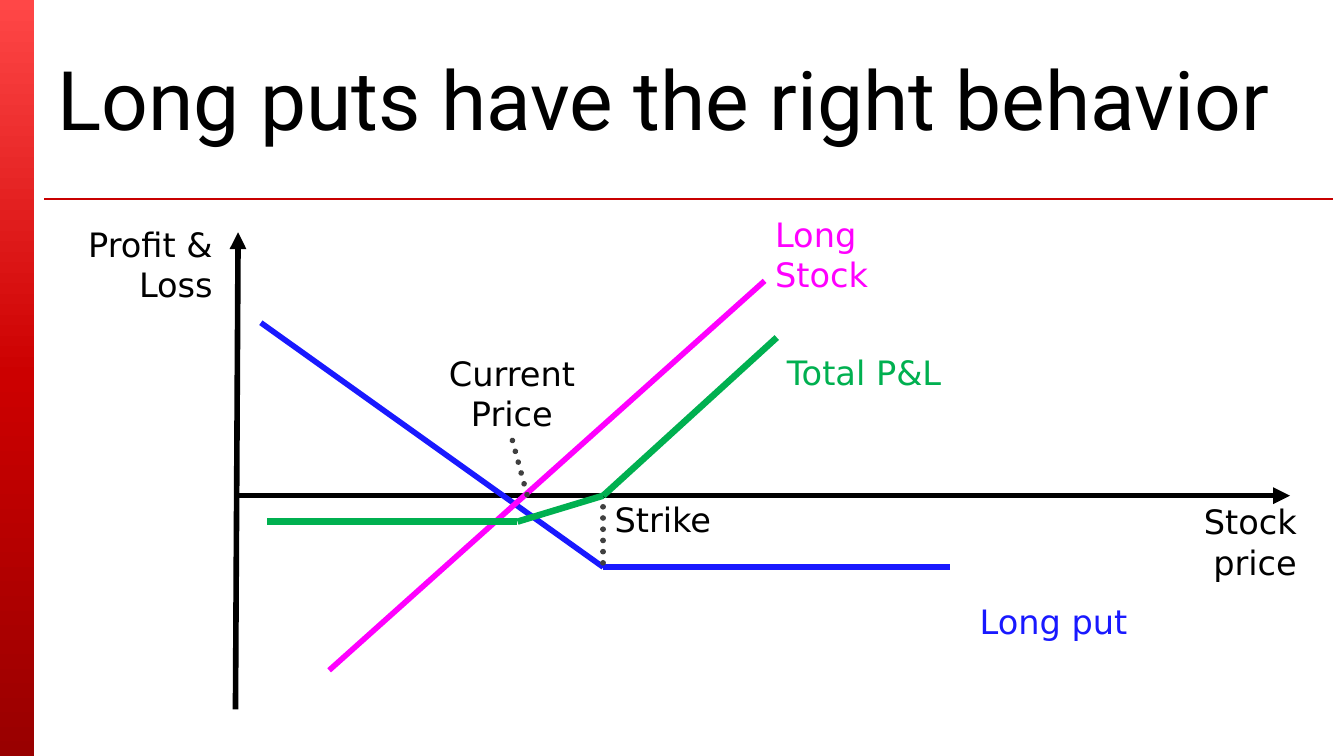
import copy

import pptx
import pptx.dml.color
import pptx.enum.dml
import pptx.enum.shapes
import pptx.enum.text
import pptx.oxml.ns
import pptx.util
from lxml import etree
from pptx.dml.color import RGBColor
from pptx.util import Cm

BLACK = RGBColor(0x00, 0x00, 0x00)
DOT_GRAY = RGBColor(0x40, 0x40, 0x40)
RULE_RED = RGBColor(0xC8, 0x00, 0x00)
PUT_BLUE = RGBColor(0x19, 0x19, 0xFF)
STOCK_MAGENTA = RGBColor(0xFF, 0x00, 0xFF)
TOTAL_GREEN = RGBColor(0x00, 0xB0, 0x50)
BAND_STOPS = [
    (0, RGBColor(0xFF, 0x47, 0x47)),
    (0.5, RGBColor(0xCC, 0x00, 0x00)),
    (1, RGBColor(0x99, 0x00, 0x00)),
]

SLIDE_WIDTH, SLIDE_HEIGHT = Cm(25.4), Cm(14.29)
AXIS_Y = 9.37
STRIKE_X = 11.4
PUT_FLOOR_Y = 10.72
TOTAL_FLOOR_Y = 9.86

LEFT = pptx.enum.text.PP_ALIGN.LEFT
CENTER = pptx.enum.text.PP_ALIGN.CENTER
RIGHT = pptx.enum.text.PP_ALIGN.RIGHT


def add_side_band(shapes):
    band = shapes.add_shape(
        pptx.enum.shapes.MSO_SHAPE.RECTANGLE, 0, 0, Cm(0.64), SLIDE_HEIGHT
    )
    band.shadow.inherit = False
    band.line.fill.background()
    band.fill.gradient()
    band.fill.gradient_angle = 270
    stop_list = band.fill._fill._gradFill.gsLst
    stop_list.append(copy.deepcopy(stop_list[-1]))
    for stop, (position, color) in zip(band.fill.gradient_stops, BAND_STOPS):
        stop.position = position
        stop.color.rgb = color


def add_line(shapes, start, end, color, width=3, arrow=False, dotted=False):
    """Draw a straight line; an arrowhead, if any, sits at the start."""
    line = shapes.add_connector(
        pptx.enum.shapes.MSO_CONNECTOR.STRAIGHT, *map(Cm, start + end)
    )
    line.line.color.rgb = color
    line.line.width = pptx.util.Pt(width)
    outline = line.line._get_or_add_ln()
    if dotted:
        # ROUND_DOT is the preset dash called sysDot in the file format
        line.line.dash_style = pptx.enum.dml.MSO_LINE.ROUND_DOT
        outline.set("cap", "rnd")
    if arrow:
        head = etree.SubElement(outline, pptx.oxml.ns.qn("a:headEnd"))
        head.set("type", "triangle")
    etree.SubElement(line._element.spPr, pptx.oxml.ns.qn("a:effectLst"))


def add_payoff(shapes, points, color, width=3):
    """Join the successive points of a payoff profile."""
    for start, end in zip(points, points[1:]):
        add_line(shapes, start, end, color, width)


def add_text(shapes, text, box, color=BLACK, align=LEFT, size=18,
             font_name="DejaVu Sans", wrap=True):
    text_box = shapes.add_textbox(*map(Cm, box))
    frame = text_box.text_frame
    frame.word_wrap = wrap
    frame.auto_size = pptx.enum.text.MSO_AUTO_SIZE.SHAPE_TO_FIT_TEXT
    frame.text = text
    paragraph = frame.paragraphs[0]
    paragraph.alignment = align
    font = paragraph.runs[0].font
    font.name = font_name
    font.size = pptx.util.Pt(size)
    font.color.rgb = color
    return frame


def add_title(shapes, text):
    frame = add_text(shapes, text, (0.84, 0.15, 24.33, 3.38), size=44,
                     font_name="Roboto")
    frame.auto_size = pptx.enum.text.MSO_AUTO_SIZE.NONE
    frame.vertical_anchor = pptx.enum.text.MSO_ANCHOR.MIDDLE


def add_axes(shapes):
    add_line(shapes, (4.5, 4.39), (4.45, 13.41), BLACK, arrow=True)
    add_line(shapes, (24.38, AXIS_Y), (4.5, AXIS_Y), BLACK, arrow=True)
    add_text(shapes, "Profit & Loss", (1.3, 4.11, 2.97, 1.45), align=RIGHT)
    add_text(shapes, "Stock price", (22.02, 9.35, 2.74, 1.8), align=RIGHT)


def add_price_markers(shapes):
    add_line(shapes, (9.96, 9.35), (9.65, 8.2), DOT_GRAY, dotted=True)
    add_text(shapes, "Current Price", (7.87, 6.55, 3.61, 1.8), align=CENTER)
    add_line(shapes, (STRIKE_X, 10.64), (STRIKE_X, 9.47), DOT_GRAY, dotted=True)
    add_text(shapes, "Strike", (10.95, 9.3, 2.74, 1.02), align=RIGHT)


def main():
    presentation = pptx.Presentation()
    presentation.slide_width = SLIDE_WIDTH
    presentation.slide_height = SLIDE_HEIGHT
    shapes = presentation.slides.add_slide(presentation.slide_layouts[6]).shapes

    add_side_band(shapes)
    add_line(shapes, (0.84, 3.76), (25.2, 3.76), RULE_RED, width=0.75)
    add_title(shapes, "Long puts have the right behavior")
    add_axes(shapes)

    add_payoff(shapes, [(4.93, 6.1), (STRIKE_X, PUT_FLOOR_Y),
                        (17.96, PUT_FLOOR_Y)], PUT_BLUE)
    add_text(shapes, "Long put", (18.21, 11.23, 3.35, 1.02), PUT_BLUE, RIGHT,
             wrap=False)
    add_payoff(shapes, [(6.22, 12.67), (14.45, 5.31)], STOCK_MAGENTA)
    add_text(shapes, "Long Stock", (14.4, 3.91, 3.81, 1.8), STOCK_MAGENTA)
    add_price_markers(shapes)

    total = shapes.add_group_shape().shapes
    add_payoff(total, [(5.05, TOTAL_FLOOR_Y), (9.78, TOTAL_FLOOR_Y),
                       (STRIKE_X, AXIS_Y), (14.68, 6.38)], TOTAL_GREEN, 3.5)
    add_text(total, "Total P&L", (13.87, 6.53, 4.17, 1.02), TOTAL_GREEN, RIGHT)

    presentation.save("out.pptx")


if __name__ == "__main__":
    main()
